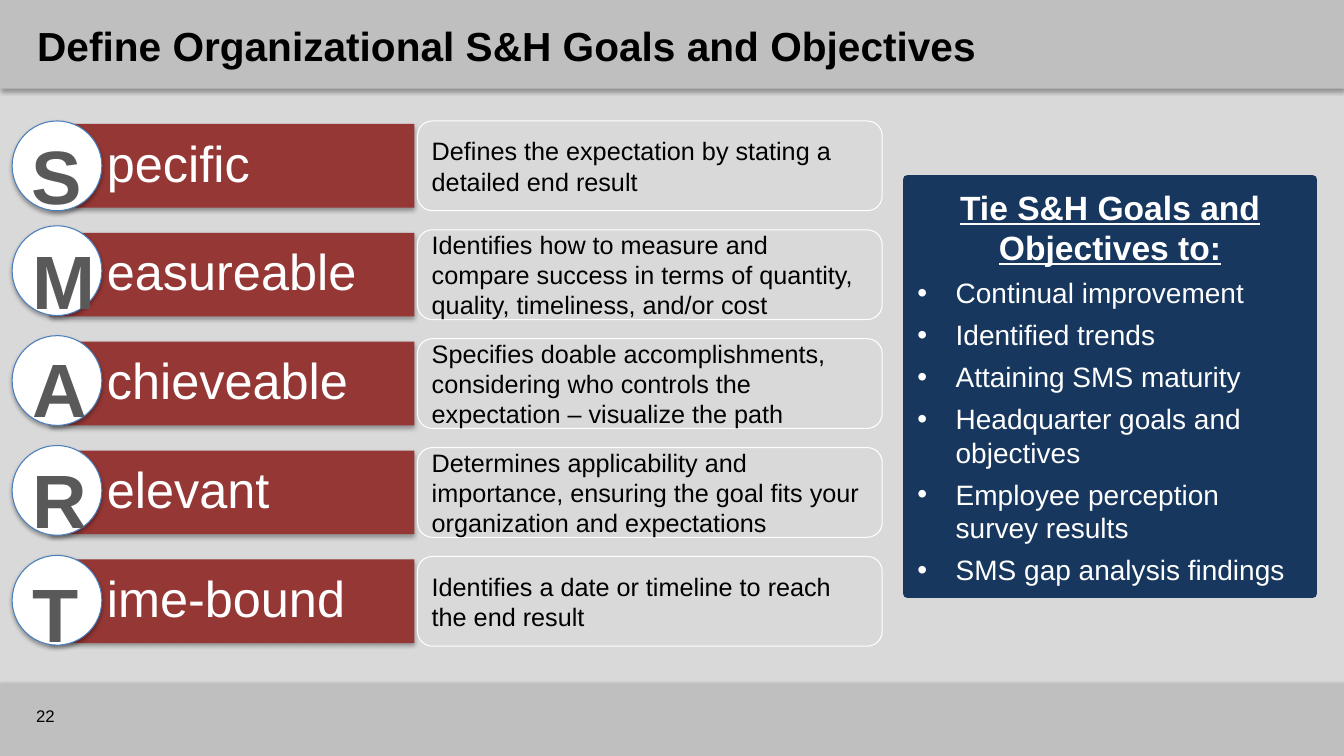
from lxml import etree
from pptx import Presentation
from pptx.dml.color import RGBColor
from pptx.enum.shapes import MSO_SHAPE
from pptx.enum.text import MSO_ANCHOR, MSO_AUTO_SIZE, PP_ALIGN
from pptx.oxml import parse_xml
from pptx.oxml.ns import nsdecls, qn
from pptx.util import Inches, Pt

RECT = MSO_SHAPE.RECTANGLE
ROUNDED = MSO_SHAPE.ROUNDED_RECTANGLE
OVAL = MSO_SHAPE.OVAL
MIDDLE = MSO_ANCHOR.MIDDLE
CENTER, LEFT = PP_ALIGN.CENTER, PP_ALIGN.LEFT

COLORS = {
    "background": "D9D9D9", "band": "BFBFBF", "red": "953735",
    "navy": "17375E", "ring": "4B7EBC", "letter": "595959",
    "white": "FFFFFF", "black": "000000",
}

# letter, rest of word, description, circle top, letter left, letter top
GOALS = [
    ("S", "pecific", "Defines the expectation by stating a detailed end result",
     1.2, 0.21, 1.09),
    ("M", "easureable", "Identifies how to measure and compare success in terms of "
     "quantity, quality, timeliness, and/or cost", 2.24, 0.22, 2.14),
    ("A", "chieveable", "Specifies doable accomplishments, considering who controls "
     "the expectation – visualize the path", 3.33, 0.22, 3.21),
    ("R", "elevant", "Determines applicability and importance, ensuring the goal fits "
     "your organization and expectations", 4.42, 0.22, 4.31),
    ("T", "ime-bound", "Identifies a date or timeline to reach the end result",
     5.51, 0.2, 5.44),
]
ROW_TOP, ROW_PITCH, ROW_HEIGHT = 1.2, 1.08, 0.89

PANEL_HEADING = "Tie S&H Goals and Objectives to:"
PANEL_ITEMS = [
    "Continual improvement", "Identified trends", "Attaining SMS maturity",
    "Headquarter goals and objectives", "Employee perception survey results",
    "SMS gap analysis findings",
]

prs = Presentation()
prs.slide_width, prs.slide_height = Inches(13.33), Inches(7.5)
slide = prs.slides.add_slide(prs.slide_layouts[6])
slide.background.fill.solid()
slide.background.fill.fore_color.rgb = RGBColor.from_string(COLORS["background"])


def add_box(kind, box, fill=None, line=None, line_width=0.75, shadow=False):
    """Add a preset shape, or a text box when kind is None; box is in inches."""
    place = [Inches(value) for value in box]
    if kind is None:
        shape = slide.shapes.add_textbox(*place)
    else:
        shape = slide.shapes.add_shape(kind, *place)
        shape.fill.solid()
        shape.fill.fore_color.rgb = RGBColor.from_string(COLORS[fill])
        if line:
            shape.line.color.rgb = RGBColor.from_string(COLORS[line])
            shape.line.width = Pt(line_width)
        else:
            shape.line.fill.background()
        shape.shadow.inherit = False
    if shadow:
        effects = shape._element.spPr.find(qn("a:effectLst"))
        effects.append(parse_xml(
            f'<a:outerShdw {nsdecls("a")} blurRad="40000" dist="23000" dir="5400000" '
            'rotWithShape="0"><a:srgbClr val="000000"><a:alpha val="35000"/>'
            '</a:srgbClr></a:outerShdw>'))
    shape.text_frame.word_wrap = True
    return shape


def write(paragraph, text, size, color, bold=False, align=LEFT):
    paragraph.text = text
    paragraph.alignment = align
    paragraph.font.name = "Arial"
    paragraph.font.size = Pt(size)
    paragraph.font.bold = bold
    paragraph.font.color.rgb = RGBColor.from_string(COLORS[color])


# Header and footer
add_box(RECT, (0, 6.78, 13.33, 0.72), "band", shadow=True)
add_box(RECT, (0, 0, 13.33, 0.88), "band", shadow=True)
title = add_box(None, (0.27, 0.14, 12.93, 0.62)).text_frame
title.vertical_anchor = MIDDLE
write(title.paragraphs[0], "Define Organizational S&H Goals and Objectives", 29, "black", bold=True)
page_number = add_box(None, (0.26, 6.9, 1, 0.4)).text_frame
page_number.vertical_anchor = MIDDLE
write(page_number.paragraphs[0], "22", 12, "black")

# SMART rows
for row, (letter, word, description, circle_top, letter_left, letter_top) in enumerate(GOALS):
    top = ROW_TOP + row * ROW_PITCH

    bar = add_box(RECT, (0.49, top + 0.03, 3.62, 0.83), "red", shadow=True).text_frame
    bar.vertical_anchor = MIDDLE
    bar.margin_left = Inches(0.57)
    bar.margin_right = bar.margin_top = bar.margin_bottom = Inches(0.1)
    write(bar.paragraphs[0], word, 36, "white")
    bar.paragraphs[0].line_spacing = 0.9

    add_box(OVAL, (0.12, circle_top, ROW_HEIGHT, ROW_HEIGHT), "white", "ring", shadow=True)
    initial = add_box(None, (letter_left, letter_top, 0.71, 0.62)).text_frame.paragraphs[0]
    write(initial, letter, 54, "letter", bold=True, align=CENTER)
    initial.line_spacing = 1.15
    initial.space_after = Pt(10)

    detail = add_box(ROUNDED, (4.14, top, 4.61, ROW_HEIGHT), "background", "white").text_frame
    detail.vertical_anchor = MIDDLE
    detail.margin_top = detail.margin_bottom = 0
    write(detail.paragraphs[0], description, 18, "black")

# Panel of ties
panel = add_box(RECT, (9, 1.78, 4.02, 4.11), "navy", "navy", line_width=6.25)
etree.SubElement(panel.line._get_or_add_ln(), qn("a:round"))
ties = panel.text_frame
ties.vertical_anchor = MIDDLE
ties.auto_size = MSO_AUTO_SIZE.SHAPE_TO_FIT_TEXT
heading = ties.paragraphs[0]
write(heading, PANEL_HEADING, 24, "white", bold=True, align=CENTER)
heading.font.underline = True
heading.space_after = Pt(6)
for item in PANEL_ITEMS:
    paragraph = ties.add_paragraph()
    paragraph.space_after = Pt(6)
    properties = paragraph._p.get_or_add_pPr()
    properties.set("marL", str(Inches(0.38)))
    properties.set("indent", str(-Inches(0.38)))
    etree.SubElement(properties, qn("a:buFont")).set("typeface", "Arial")
    etree.SubElement(properties, qn("a:buChar")).set("char", "•")
    write(paragraph, item, 20, "white")

prs.save("out.pptx")
